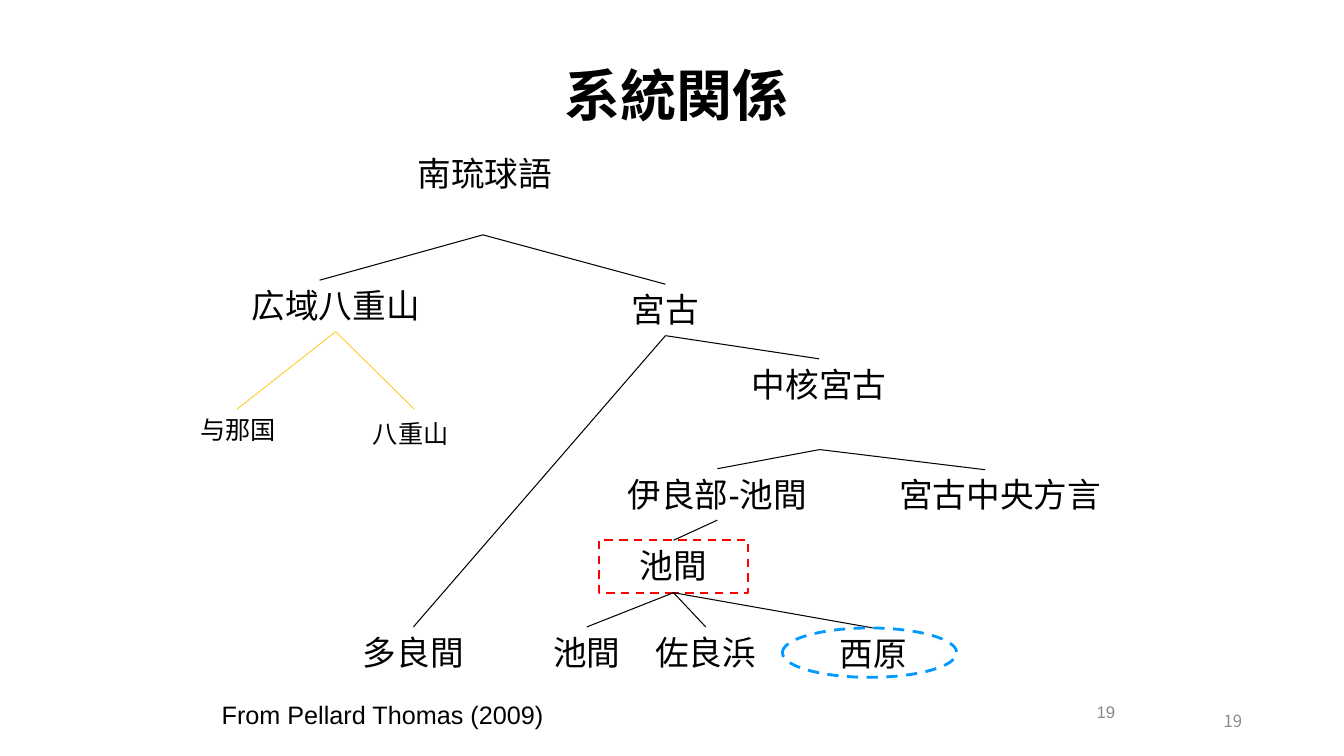
from dataclasses import dataclass
from pptx import Presentation
from pptx.dml.color import RGBColor
from pptx.enum.dml import MSO_LINE
from pptx.enum.shapes import MSO_CONNECTOR, MSO_SHAPE
from pptx.enum.text import MSO_ANCHOR, MSO_AUTO_SIZE, PP_ALIGN
from pptx.oxml.ns import qn
from pptx.util import Pt
from lxml import etree


@dataclass(frozen=True)
class Theme:
    font: str = "Arial"
    number_font: str = "Noto Sans CJK JP"
    ink: str = "000000"
    grey: str = "898989"
    light_grey: str = "8C8C8C"
    red: str = "FF0000"
    blue: str = "0099FF"
    gold: str = "FFC000"
    title_size: int = 40
    language_size: int = 24
    small_size: int = 18
    number_size: int = 12


THEME = Theme()
PX = 9144
SLIDE_SIZE = (1333, 750)

TITLE = ("系統関係", (221, 31, 900, 125))
LANGUAGES = {
    "southern_ryukyuan": ("南琉球語", (391, 147, 180, 51)),
    "macro_yaeyama": ("広域八重山", (235, 278, 196, 51)),
    "miyako": ("宮古", (586, 282, 148, 51)),
    "core_miyako": ("中核宮古", (703, 356, 219, 51)),
    "irabu_ikema": ("伊良部-池間", (602, 465, 219, 51)),
    "central_miyako": ("宮古中央方言", (868, 465, 248, 51)),
    "ikema_group": ("池間", (594, 536, 148, 52)),
    "tarama": ("多良間", (336, 622, 148, 51)),
    "ikema": ("池間", (508, 622, 148, 51)),
    "sarahama": ("佐良浜", (618, 622, 164, 51)),
    "nishihara": ("西原", (774, 623, 184, 51)),
}
BOXED_LANGUAGE = "ikema_group"
NISHIHARA_RING = (776, 623, 173, 49)
SMALL_LABELS = [
    ("与那国", (189, 406, 128, 40)),
    ("八重山", (360, 410, 122, 40)),
    ("From Pellard Thomas (2009)", (210, 689, 441, 40)),
]
PAGE_NUMBERS = [
    ("19", (883, 686, 233, 40), THEME.font, THEME.grey),
    ("19", (942, 695, 300, 40), THEME.number_font, THEME.light_grey),
]
RYUKYUAN_FORK = (479, 233)
CORE_FORK = (813, 446)
BRANCHES = [
    (RYUKYUAN_FORK, (317, 278)),
    (RYUKYUAN_FORK, "miyako"),
    ("miyako", "core_miyako"),
    ("miyako", "tarama"),
    (CORE_FORK, "irabu_ikema"),
    (CORE_FORK, (977, 466)),
    ("irabu_ikema", "ikema_group"),
    ("ikema_group", "ikema"),
    ("ikema_group", "sarahama"),
    ("ikema_group", "nishihara"),
]
YAEYAMA_BRANCHES = [
    ("macro_yaeyama", (235, 406)),
    ("macro_yaeyama", (411, 406)),
]
TOP, BOTTOM = 0, 2


def emu(lengths):
    return [length * PX for length in lengths]


def write(shape, text, size, align, anchor=MSO_ANCHOR.TOP, font=THEME.font,
          color=THEME.ink, bold=False, fit=MSO_AUTO_SIZE.SHAPE_TO_FIT_TEXT):
    frame = shape.text_frame
    frame.word_wrap = True
    frame.auto_size = fit
    frame.vertical_anchor = anchor
    frame.text = text
    paragraph = frame.paragraphs[0]
    paragraph.alignment = align
    paragraph.font.name = font
    paragraph.font.size = Pt(size)
    paragraph.font.bold = bold
    paragraph.font.color.rgb = RGBColor.from_string(color)


def add_outline(shapes, kind, box, color, width):
    outline = shapes.add_shape(kind, *emu(box))
    outline.shadow.inherit = False
    outline.fill.background()
    outline.line.color.rgb = RGBColor.from_string(color)
    outline.line.width = Pt(width)
    outline.line.dash_style = MSO_LINE.DASH
    return outline


def add_branch(shapes, nodes, parent, child, color, width):
    branch = shapes.add_connector(MSO_CONNECTOR.STRAIGHT, 0, 0, 0, 0)
    if parent in nodes:
        branch.begin_connect(nodes[parent], BOTTOM)
    else:
        branch.begin_x, branch.begin_y = emu(parent)
    if child in nodes:
        branch.end_connect(nodes[child], TOP)
    else:
        branch.end_x, branch.end_y = emu(child)
    branch.line.color.rgb = RGBColor.from_string(color)
    branch.line.width = Pt(width)
    etree.SubElement(branch._element.spPr, qn("a:effectLst"))


def main():
    deck = Presentation()
    deck.slide_width, deck.slide_height = emu(SLIDE_SIZE)
    slide = deck.slides.add_slide(deck.slide_layouts[5])
    shapes = slide.shapes

    title_text, title_box = TITLE
    title = shapes.title
    title.left, title.top, title.width, title.height = emu(title_box)
    write(title, title_text, THEME.title_size, PP_ALIGN.CENTER,
          MSO_ANCHOR.MIDDLE, bold=True, fit=MSO_AUTO_SIZE.NONE)

    nodes = {}
    for language, (text, box) in LANGUAGES.items():
        if language == BOXED_LANGUAGE:
            node = add_outline(shapes, MSO_SHAPE.RECTANGLE, box, THEME.red, 1.5)
        else:
            node = shapes.add_textbox(*emu(box))
        write(node, text, THEME.language_size, PP_ALIGN.CENTER)
        nodes[language] = node

    for branches, color, width in ((BRANCHES, THEME.ink, 0.75),
                                   (YAEYAMA_BRANCHES, THEME.gold, 0.5)):
        for parent, child in branches:
            add_branch(shapes, nodes, parent, child, color, width)

    add_outline(shapes, MSO_SHAPE.OVAL, NISHIHARA_RING, THEME.blue, 2)

    for text, box in SMALL_LABELS:
        write(shapes.add_textbox(*emu(box)), text, THEME.small_size, PP_ALIGN.LEFT)

    for text, box, font, color in PAGE_NUMBERS:
        write(shapes.add_textbox(*emu(box)), text, THEME.number_size, PP_ALIGN.RIGHT,
              MSO_ANCHOR.MIDDLE, font, color, fit=MSO_AUTO_SIZE.NONE)

    deck.save("out.pptx")


if __name__ == "__main__":
    main()
